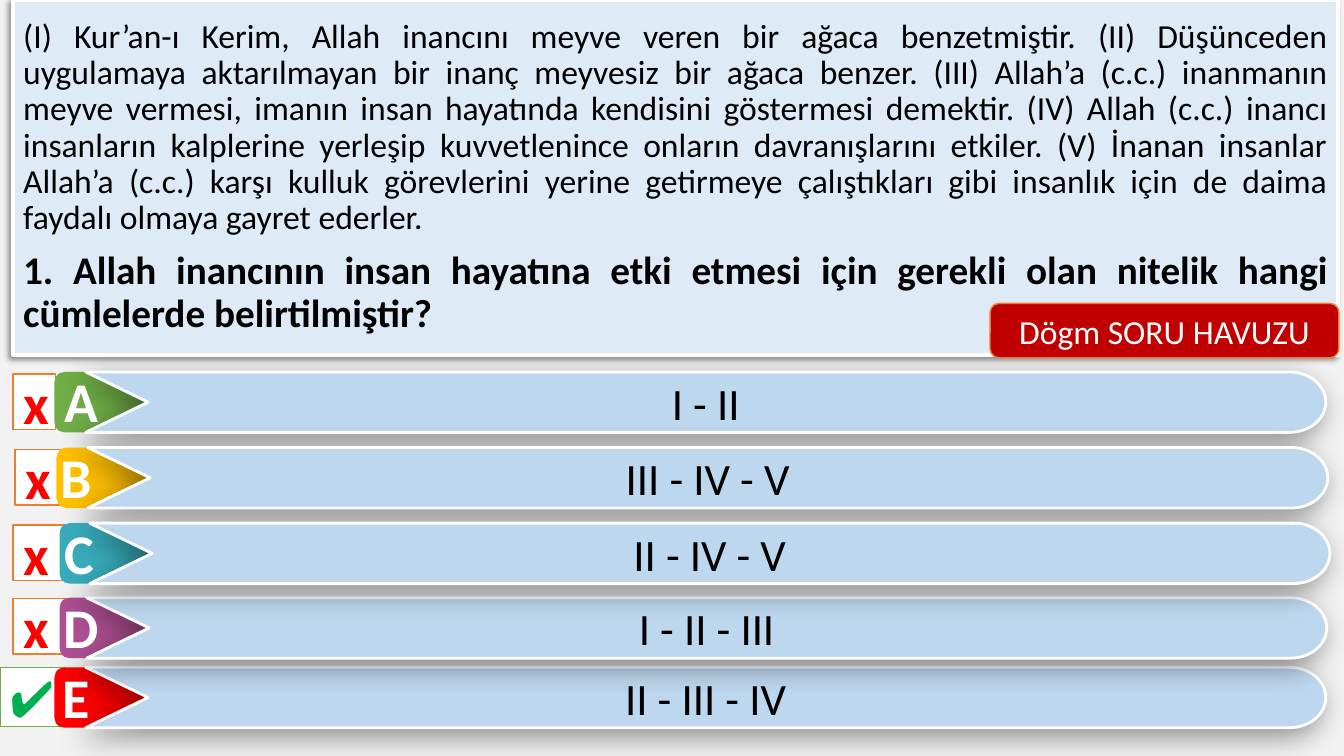
from dataclasses import dataclass
from math import cos, pi, sin
from lxml.etree import SubElement
from pptx import Presentation
from pptx.dml.color import RGBColor
from pptx.enum.shapes import MSO_SHAPE
from pptx.enum.text import MSO_ANCHOR, MSO_AUTO_SIZE, PP_ALIGN
from pptx.oxml.ns import qn
from pptx.util import Inches, Pt

PASSAGE = (
    "(I) Kur’an-ı Kerim, Allah inancını meyve veren bir ağaca benzetmiştir. "
    "(II) Düşünceden uygulamaya aktarılmayan bir inanç meyvesiz bir ağaca benzer. "
    "(III) Allah’a (c.c.) inanmanın meyve vermesi, imanın insan hayatında kendisini "
    "göstermesi demektir. (IV) Allah (c.c.) inancı insanların kalplerine yerleşip "
    "kuvvetlenince onların davranışlarını etkiler. (V) İnanan insanlar Allah’a (c.c.) "
    "karşı kulluk görevlerini yerine getirmeye çalıştıkları gibi insanlık için de daima "
    "faydalı olmaya gayret ederler."
)
QUESTION = (
    "1. Allah inancının insan hayatına etki etmesi için gerekli olan nitelik hangi "
    "cümlelerde belirtilmiştir?"
)
POOL_LABEL = "Dögm SORU HAVUZU"


@dataclass
class Answer:
    letter: str
    text: str
    color: str
    top: float
    badge_left: float
    bar_left: float
    letter_center: float
    marker_box: tuple
    correct: bool = False


ANSWERS = [
    Answer("A", "I - II", "70AD47", 3.69, 0.54, 0.85, 0.81, (0.13, 3.71, 0.42, 0.55)),
    Answer("E", "II - III - IV", "FF0000", 6.62, 0.54, 0.85, 0.76, (0, 6.62, 0.64, 0.59), True),
    Answer("B", "III - IV - V", "FFC000", 4.44, 0.56, 0.87, 0.76, (0.15, 4.46, 0.55, 0.55)),
    Answer("D", "I - II - III", "AE5092", 5.93, 0.59, 0.86, 0.81, (0.13, 5.94, 0.55, 0.55)),
    Answer("C", "II - IV - V", "38ACBB", 5.19, 0.59, 0.89, 0.79, (0.13, 5.21, 0.55, 0.55)),
]


@dataclass
class Theme:
    font: str = "Calibri"
    page: str = "F2F2F2"
    panel: str = "DEEBF7"
    bar: str = "BDD7EE"
    white: str = "FFFFFF"
    ink: str = "000000"
    label: str = "C00000"
    orange: str = "ED7D31"
    green: str = "70AD47"
    wrong: str = "FF0000"
    right: str = "00B050"
    body_size: int = 24
    question_size: int = 28
    answer_size: int = 32
    check_size: int = 36
    letter_size: int = 40


THEME = Theme()
ROW_HEIGHT, BAR_WIDTH, CAP, NOTCH = 0.6, 12.3, 0.36, 0.62


def rgb(value):
    return RGBColor.from_string(value)


def paint(shape, fill, line=None, width=1):
    shape.shadow.inherit = False
    shape.fill.solid()
    shape.fill.fore_color.rgb = rgb(fill)
    if line:
        shape.line.color.rgb = rgb(line)
        shape.line.width = Pt(width)
    else:
        shape.line.fill.background()


def cast_shadow(shape, opacity, blur, distance):
    effects = shape._element.spPr.find(qn("a:effectLst"))
    shadow = SubElement(
        effects, qn("a:outerShdw"), blurRad=str(Pt(blur)), dist=str(Pt(distance)),
        dir=str(135 * 60000), algn="tr", rotWithShape="0",
    )
    color = SubElement(shadow, qn("a:srgbClr"), val=THEME.ink)
    SubElement(color, qn("a:alpha"), val=str(opacity * 1000))


def style(para, size, color, bold=False, align=PP_ALIGN.CENTER):
    para.alignment = align
    para.font.name = THEME.font
    para.font.size = Pt(size)
    para.font.bold = bold
    para.font.color.rgb = rgb(color)


def write(shape, text, *looks):
    frame = shape.text_frame
    frame.word_wrap = True
    frame.text = text
    style(frame.paragraphs[0], *looks)


def add_panel(page):
    page.shapes.title._element.getparent().remove(page.shapes.title._element)
    panel = page.placeholders[1]
    panel.left, panel.top, panel.width, panel.height = map(Inches, (0.13, 0, 13.14, 3.52))
    paint(panel, THEME.panel, THEME.white, 2.5)
    cast_shadow(panel, 40, 4, 3)
    frame = panel.text_frame
    frame.text = f"{PASSAGE}\n{QUESTION}"
    frame.auto_size = MSO_AUTO_SIZE.NONE
    frame.vertical_anchor = MSO_ANCHOR.MIDDLE
    looks = [(THEME.body_size, False), (THEME.question_size, True)]
    for para, (size, bold) in zip(frame.paragraphs, looks):
        style(para, size, THEME.ink, bold, PP_ALIGN.JUSTIFY)
        para.line_spacing = 0.9
        para.space_before = Pt(10)
        properties = para._p.get_or_add_pPr()
        properties.set("marL", "0")
        properties.set("indent", "0")
        properties.insert_element_before(
            properties.makeelement(qn("a:buNone"), {}), "a:tabLst", "a:defRPr", "a:extLst"
        )


def add_bar(page, answer):
    left, top, middle = answer.bar_left, answer.top, answer.top + ROW_HEIGHT / 2
    cap_left = left + BAR_WIDTH - CAP
    angles = [-pi / 2 + pi * step / 24 for step in range(25)]
    outline = [(cap_left + CAP * cos(a), middle + ROW_HEIGHT / 2 * sin(a)) for a in angles]
    outline += [(left, top + ROW_HEIGHT), (left + NOTCH, middle)]
    builder = page.shapes.build_freeform(Inches(left), Inches(top))
    builder.add_line_segments([(Inches(x), Inches(y)) for x, y in outline], close=True)
    bar = builder.convert_to_shape()
    paint(bar, THEME.bar, THEME.white, 2)
    cast_shadow(bar, 40, 20, 7)
    bar.text_frame.vertical_anchor = MSO_ANCHOR.MIDDLE
    write(bar, answer.text, THEME.answer_size, THEME.ink)


def add_answer(page, answer):
    marker = page.shapes.add_shape(MSO_SHAPE.RECTANGLE, *map(Inches, answer.marker_box))
    paint(marker, THEME.white, THEME.green if answer.correct else THEME.orange)
    if answer.correct:
        write(marker, "✔", THEME.check_size, THEME.right, False, PP_ALIGN.LEFT)
    else:
        write(marker, "x", THEME.letter_size, THEME.wrong, True, PP_ALIGN.LEFT)

    badge_box = (answer.badge_left, answer.top, 1.31, ROW_HEIGHT)
    badge = page.shapes.add_shape(MSO_SHAPE.ROUNDED_RECTANGLE, *map(Inches, badge_box))
    paint(badge, answer.color)
    add_bar(page, answer)

    letter_box = (answer.letter_center - 0.4, answer.top - 0.1, 0.8, 0.77)
    letter = page.shapes.add_textbox(*map(Inches, letter_box))
    write(letter, answer.letter, THEME.letter_size, THEME.white, True)


def main():
    deck = Presentation()
    deck.slide_width, deck.slide_height = Inches(13.33), Inches(7.5)
    page = deck.slides.add_slide(deck.slide_layouts[1])
    page.background.fill.solid()
    page.background.fill.fore_color.rgb = rgb(THEME.page)
    add_panel(page)
    for answer in ANSWERS:
        add_answer(page, answer)
    label_box = map(Inches, (9.82, 3.01, 3.46, 0.54))
    label = page.shapes.add_shape(MSO_SHAPE.ROUNDED_RECTANGLE, *label_box)
    paint(label, THEME.label, THEME.orange)
    write(label, POOL_LABEL, THEME.body_size, THEME.white)
    deck.save("out.pptx")


if __name__ == "__main__":
    main()
